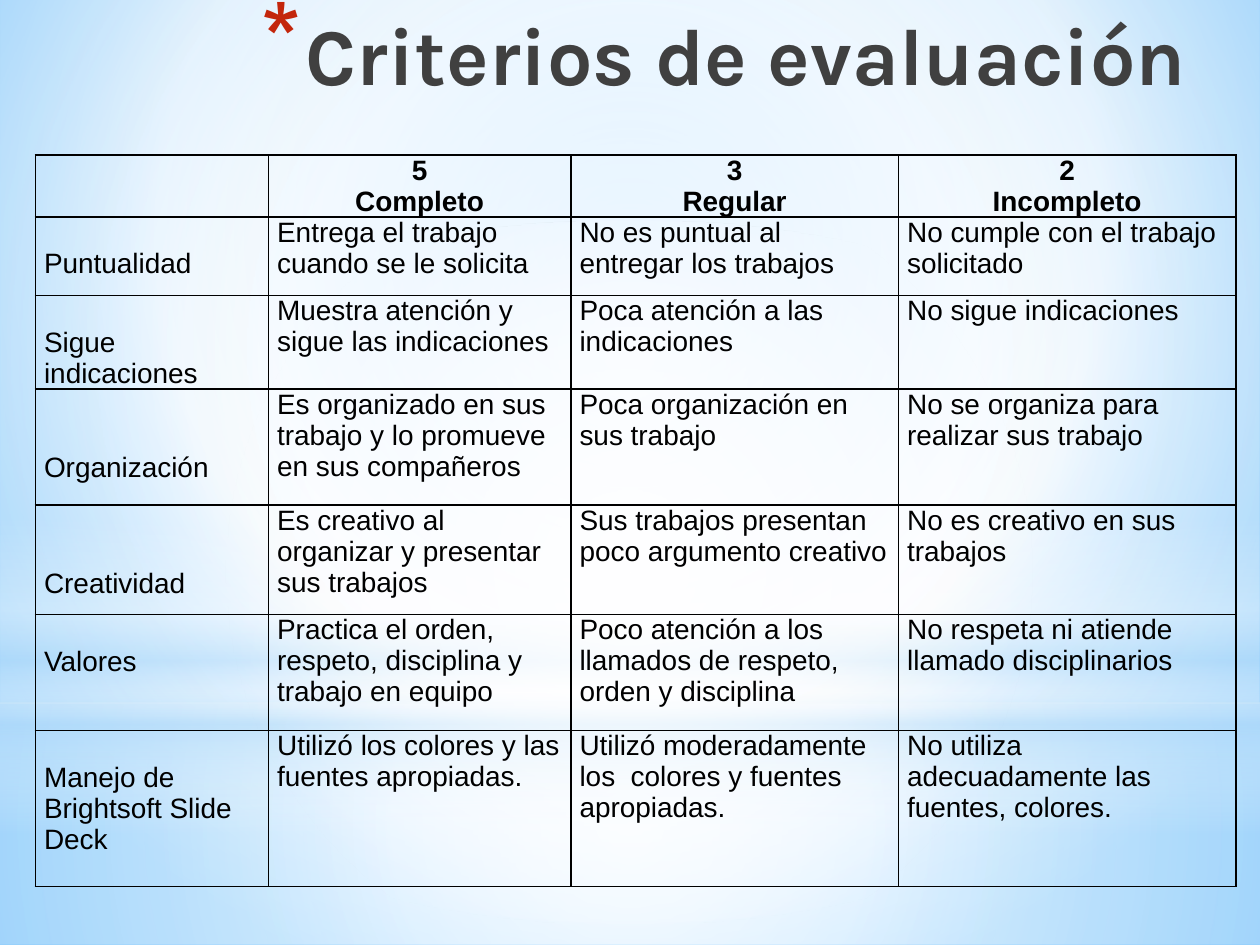
from dataclasses import dataclass

import pptx
import pptx.dml.color
import pptx.enum.shapes
import pptx.enum.text
import pptx.oxml
import pptx.oxml.ns
import pptx.util
from pptx.util import Inches


@dataclass(frozen=True)
class Theme:
    title_font: str = "Karla"
    body_font: str = "Arial"
    title_size: int = 46
    body_size: int = 16
    title_color: str = "404040"
    bullet_color: str = "C3260C"
    ink: str = "000000"
    white: str = "FFFFFF"
    pale: str = "B4DCFA"
    sky: str = "9ED5FF"
    deep_sky: str = "5BB9FF"
    border_width: int = 1
    line_height: float = 0.25


THEME = Theme()
CENTER = (50, 50, 50, 50)

COLUMN_WIDTHS = (1.85, 2.4, 2.6, 2.68)
ROW_HEIGHTS = (0.49, 0.62, 0.74, 0.92, 0.87, 0.92, 1.24)
HEADER = ("", "5\nCompleto", "3\nRegular", "2\nIncompleto")
CRITERIA = (
    ("Puntualidad", "Entrega el trabajo cuando se le solicita",
     "No es puntual al entregar los trabajos", "No cumple con el trabajo solicitado"),
    ("Sigue indicaciones", "Muestra atención y sigue las indicaciones",
     "Poca atención a las indicaciones", "No sigue indicaciones"),
    ("Organización", "Es organizado en sus trabajo y lo promueve en sus compañeros",
     "Poca organización en sus trabajo", "No se organiza para realizar sus trabajo"),
    ("Creatividad", "Es creativo al organizar y presentar sus trabajos",
     "Sus trabajos presentan poco argumento creativo", "No es creativo en sus trabajos"),
    ("Valores", "Practica el orden, respeto, disciplina y trabajo en equipo",
     "Poco atención a los llamados de respeto, orden y disciplina",
     "No respeta ni atiende llamado disciplinarios"),
    ("Manejo de Brightsoft Slide Deck", "Utilizó los colores y las fuentes apropiadas.",
     "Utilizó moderadamente los  colores y fuentes apropiadas.",
     "No utiliza adecuadamente las fuentes, colores."),
)
# Lines by which each criterion name is lowered in its cell
NAME_OFFSETS = (1, 1, 2, 2, 1, 1)


def parse(xml):
    return pptx.oxml.parse_xml(xml.replace(">", f" {pptx.oxml.ns.nsdecls('a')}>", 1))


def format_font(font, name, size, color, bold):
    font.name = name
    font.size = pptx.util.Pt(size)
    font.bold = bold
    font.color.rgb = pptx.dml.color.RGBColor.from_string(color)


def apply_gradient(fill, element, stops, focus=None):
    """Fill with (position, colour, opacity) stops: round about focus, else downward."""
    fill.solid()
    stop_xml = "".join(
        f'<a:gs pos="{position * 1000}"><a:srgbClr val="{color}">'
        f'<a:alpha val="{opacity * 1000}"/></a:srgbClr></a:gs>'
        for position, color, opacity in stops
    )
    if focus:
        left, top, right, bottom = (value * 1000 for value in focus)
        direction = (f'<a:path path="circle"><a:fillToRect l="{left}" t="{top}" '
                     f'r="{right}" b="{bottom}"/></a:path>')
    else:
        direction = '<a:lin ang="5400000" scaled="0"/>'
    solid = next(element.iter(pptx.oxml.ns.qn("a:solidFill")))
    solid.getparent().replace(
        solid, parse(f'<a:gradFill rotWithShape="1"><a:gsLst>{stop_xml}</a:gsLst>{direction}</a:gradFill>'))


def add_glow(slide, kind, top, height, stops, focus=None):
    """Add a translucent gradient band across the whole slide."""
    shape = slide.shapes.add_shape(kind, 0, Inches(top), Inches(10), Inches(height))
    shape.shadow.inherit = False
    shape.line.fill.background()
    apply_gradient(shape.fill, shape.element, stops, focus)


def add_backdrop(slide):
    white, pale = THEME.white, THEME.pale
    rectangle = pptx.enum.shapes.MSO_SHAPE.RECTANGLE
    apply_gradient(slide.background.fill, slide.element,
                   [(0, THEME.sky, 100), (60, white, 100), (100, THEME.deep_sky, 100)],
                   (20, 10, 20, 60))
    add_glow(slide, rectangle, 5.58, 1.92,
             [(0, white, 91), (37, white, 76), (100, pale, 79)], CENTER)
    add_glow(slide, rectangle, 0, 5.58,
             [(0, white, 89), (48, white, 62), (100, pale, 79)], CENTER)
    add_glow(slide, rectangle, 4.12, 2.5,
             [(0, white, 0), (29, white, 30), (45, pale, 40),
              (55, white, 26), (65, pale, 60), (100, white, 0)])
    add_glow(slide, pptx.enum.shapes.MSO_SHAPE.OVAL, 1.75, 5.58,
             [(0, white, 100), (56, white, 0)], CENTER)


def place_title(slide, text):
    title = slide.shapes.title
    slide.shapes.element.append(title.element)  # bring in front of the backdrop
    title.left, title.top, title.width, title.height = map(Inches, (0.51, 0, 9, 0.84))
    frame = title.text_frame
    frame.text = text
    frame.auto_size = pptx.enum.text.MSO_AUTO_SIZE.NONE
    frame.vertical_anchor = pptx.enum.text.MSO_ANCHOR.MIDDLE
    paragraph = frame.paragraphs[0]
    paragraph.alignment = pptx.enum.text.PP_ALIGN.RIGHT
    properties = paragraph._p.get_or_add_pPr()
    properties.set("marL", str(Inches(0.35)))
    properties.set("indent", str(Inches(-0.35)))
    for bullet in (f'<a:buClr><a:srgbClr val="{THEME.bullet_color}"/></a:buClr>',
                   '<a:buSzPct val="128000"></a:buSzPct>',
                   '<a:buChar char="*"></a:buChar>'):
        properties.append(parse(bullet))
    format_font(paragraph.font, THEME.title_font, THEME.title_size, THEME.title_color, True)


def add_borders(cell):
    properties = cell._tc.get_or_add_tcPr()
    for index, side in enumerate(("lnL", "lnR", "lnT", "lnB")):
        properties.insert(index, parse(
            f'<a:{side} w="{pptx.util.Pt(THEME.border_width)}"><a:solidFill>'
            f'<a:srgbClr val="{THEME.ink}"/></a:solidFill></a:{side}>'))


def fill_cell(cell, text, is_header, offset):
    cell.text = text
    cell.fill.background()
    cell.margin_left = cell.margin_right = Inches(0.07)
    cell.margin_top = Inches(offset * THEME.line_height)
    cell.margin_bottom = 0
    add_borders(cell)
    for paragraph in cell.text_frame.paragraphs:
        if is_header:
            paragraph.alignment = pptx.enum.text.PP_ALIGN.CENTER
        format_font(paragraph.font, THEME.body_font, THEME.body_size, THEME.ink, is_header)


def add_rubric(slide):
    rows = (HEADER, *CRITERIA)
    table = slide.shapes.add_table(
        len(rows), len(HEADER), Inches(0.28), Inches(1.23),
        Inches(sum(COLUMN_WIDTHS)), Inches(sum(ROW_HEIGHTS))).table
    table.first_row = table.horz_banding = False
    for column, width in zip(table.columns, COLUMN_WIDTHS):
        column.width = Inches(width)
    for row, height in zip(table.rows, ROW_HEIGHTS):
        row.height = Inches(height)
    for row_index, texts in enumerate(rows):
        for column_index, text in enumerate(texts):
            is_name = row_index > 0 and column_index == 0
            offset = NAME_OFFSETS[row_index - 1] if is_name else 0
            fill_cell(table.cell(row_index, column_index), text, row_index == 0, offset)


def main():
    presentation = pptx.Presentation()
    presentation.slide_width, presentation.slide_height = Inches(10), Inches(7.5)
    slide = presentation.slides.add_slide(presentation.slide_layouts[5])
    add_backdrop(slide)
    place_title(slide, "Criterios de evaluación")
    add_rubric(slide)
    presentation.save("out.pptx")


if __name__ == "__main__":
    main()
